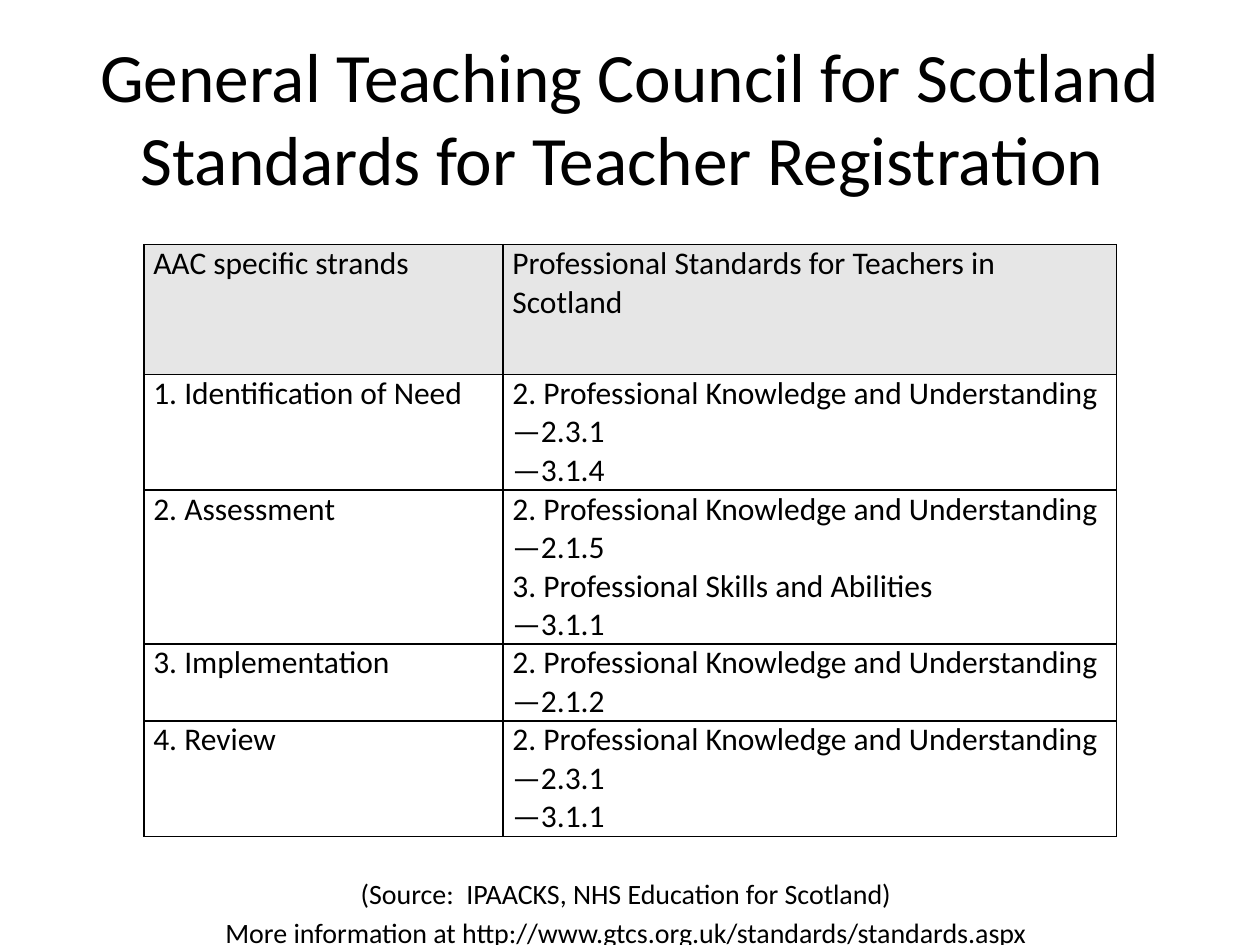
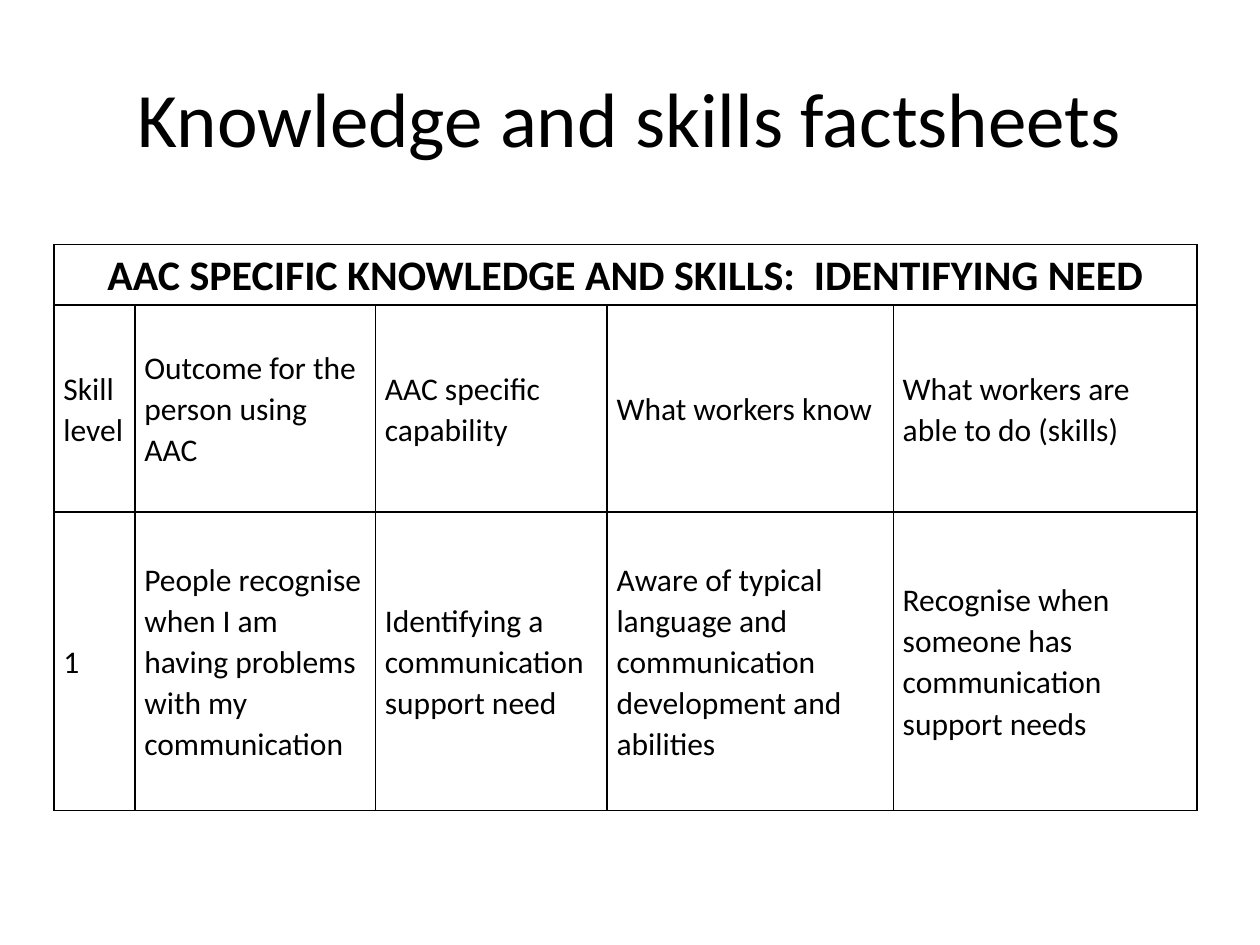
from lxml import etree
from pptx import Presentation
from pptx.dml.color import RGBColor
from pptx.enum.text import MSO_ANCHOR, PP_ALIGN
from pptx.oxml.ns import qn
from pptx.util import Cm, Pt

LEFT, CENTER = PP_ALIGN.LEFT, PP_ALIGN.CENTER
TOP, MIDDLE = MSO_ANCHOR.TOP, MSO_ANCHOR.MIDDLE
FONT = "Calibri"
INK, PAPER, HEADER_GREY = "000000", "FFFFFF", "E6E6E6"
TABLE_TOP = 4.93
KNOWLEDGE = "2. Professional Knowledge and Understanding"
SKILLS = "3. Professional Skills and Abilities"


def color(hex_text):
    return RGBColor.from_string(hex_text)


class Deck:
    """Hold the shared style and the current slide."""

    def __init__(self):
        self.presentation = Presentation()
        self.presentation.slide_width = Cm(25.4)
        self.presentation.slide_height = Cm(19.05)
        self.slide = None

    def new_slide(self, title, size):
        self.slide = self.presentation.slides.add_slide(self.presentation.slide_layouts[6])
        background = self.slide.background.fill
        background.solid()
        background.fore_color.rgb = color(PAPER)
        self.text((1.27, 0.76, 22.86, 3.18), [title], size, anchor=MIDDLE)

    def add_lines(self, frame, lines, size, align=LEFT, bold=False, before=0, after=0, spacing=1.0):
        frame.word_wrap = True
        for index, line in enumerate(lines):
            paragraph = frame.add_paragraph() if index else frame.paragraphs[0]
            paragraph.alignment = align
            paragraph.line_spacing = spacing
            paragraph.space_before = Pt(before if index else 0)
            paragraph.space_after = Pt(after)
            run = paragraph.add_run()
            run.text = line
            run.font.name = FONT
            run.font.size = Pt(size)
            run.font.bold = bold
            run.font.color.rgb = color(INK)

    def text(self, place, lines, size, anchor=TOP, before=0):
        frame = self.slide.shapes.add_textbox(*map(Cm, place)).text_frame
        frame.vertical_anchor = anchor
        self.add_lines(frame, lines, size, CENTER, before=before)

    def table(self, left, widths, heights):
        grid = self.slide.shapes.add_table(
            len(heights), len(widths), Cm(left), Cm(TABLE_TOP), Cm(sum(widths)), Cm(sum(heights))
        ).table
        grid.first_row = grid.horz_banding = False
        for column, width in zip(grid.columns, widths):
            column.width = Cm(width)
        for row, height in zip(grid.rows, heights):
            row.height = Cm(height)
        for cell in grid.iter_cells():
            self.border(cell)
            cell.fill.background()
            cell.margin_left = cell.margin_right = Cm(0.19)
            cell.margin_top = cell.margin_bottom = 0
        return grid

    def border(self, cell):
        properties = cell._tc.get_or_add_tcPr()
        for side in ("a:lnL", "a:lnR", "a:lnT", "a:lnB"):
            line = etree.SubElement(properties, qn(side), w=str(Pt(1)))
            fill = etree.SubElement(line, qn("a:solidFill"))
            etree.SubElement(fill, qn("a:srgbClr"), val=INK)

    def cell(self, cell, lines, size=18, anchor=TOP, fill=None, **style):
        cell.vertical_anchor = anchor
        if fill:
            cell.fill.solid()
            cell.fill.fore_color.rgb = color(fill)
        self.add_lines(cell.text_frame, lines, size, **style)


def teacher_standards(deck):
    deck.new_slide("General Teaching Council for Scotland Standards for Teacher Registration ", 39.6)
    strands = [
        ("AAC specific strands", ["Professional Standards for Teachers in Scotland"]),
        ("1. Identification of Need", [KNOWLEDGE, "—2.3.1", "—3.1.4"]),
        ("2. Assessment", [KNOWLEDGE, "—2.1.5", SKILLS, "—3.1.1"]),
        ("3. Implementation", [KNOWLEDGE, "—2.1.2"]),
        ("4. Review", [KNOWLEDGE, "—2.3.1", "—3.1.1"]),
    ]
    grid = deck.table(2.9, [7.24, 12.37], [2.62, 2.33, 3.1, 1.55, 2.33])
    for row, (strand, standards) in enumerate(strands):
        fill = None if row else HEADER_GREY
        deck.cell(grid.cell(row, 0), [strand], fill=fill)
        deck.cell(grid.cell(row, 1), standards, fill=fill)
    sources = [
        "(Source:  IPAACKS, NHS Education for Scotland)",
        "More information at http://www.gtcs.org.uk/standards/standards.aspx",
    ]
    deck.text((1.19, 17.55, 22.86, 1.5), sources, 16, before=3.2)


def skills_factsheet(deck):
    deck.new_slide("Knowledge and skills factsheets", 44)
    rows = [
        [
            "Skill level",
            "Outcome for the person using AAC",
            "AAC specific capability",
            "What workers know",
            "What workers are able to do (skills)",
        ],
        [
            "1",
            "People recognise when I am having problems with my communication",
            "Identifying a communication support need",
            "Aware of typical language and communication development and abilities",
            "Recognise when someone has communication support needs",
        ],
    ]
    grid = deck.table(1.09, [1.63, 4.85, 4.67, 5.77, 6.12], [1.22, 4.17, 6.02])
    style = {"anchor": MIDDLE, "after": 8, "spacing": 1.07}
    banner = grid.cell(0, 0)
    banner.merge(grid.cell(0, 4))
    heading = "AAC SPECIFIC KNOWLEDGE AND SKILLS:  IDENTIFYING NEED"
    deck.cell(banner, [heading], 24, align=CENTER, bold=True, **style)
    for row, entries in enumerate(rows, 1):
        for column, entry in enumerate(entries):
            deck.cell(grid.cell(row, column), [entry], **style)


def main():
    deck = Deck()
    teacher_standards(deck)
    skills_factsheet(deck)
    deck.presentation.save("out.pptx")


if __name__ == "__main__":
    main()
